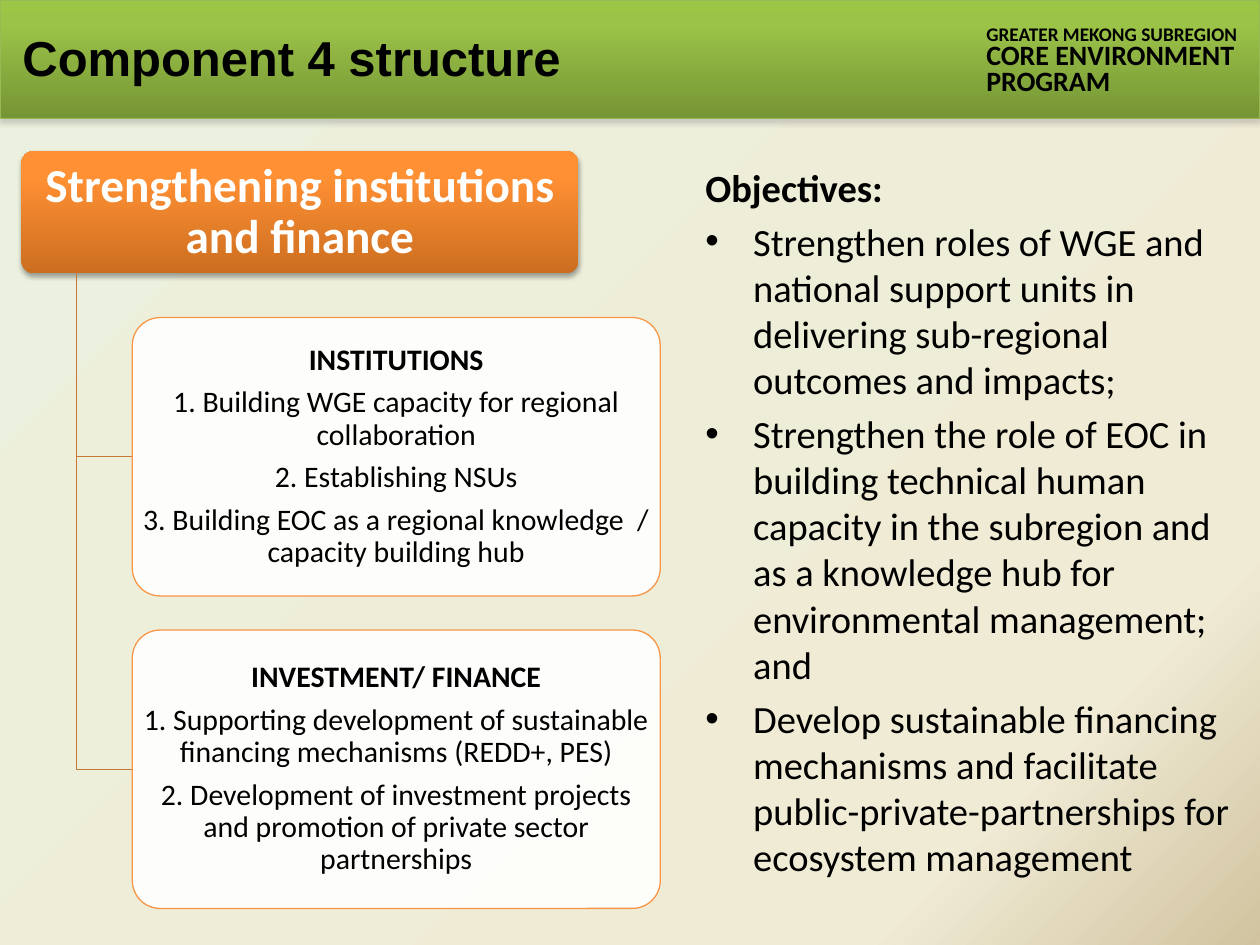
"""Build the Component 4 structure slide."""
from dataclasses import dataclass

import lxml.etree
import pptx
import pptx.dml.color
import pptx.enum.shapes
import pptx.enum.text
import pptx.oxml.ns
import pptx.util

Inches = pptx.util.Inches
Pt = pptx.util.Pt
qn = pptx.oxml.ns.qn
Align = pptx.enum.text.PP_ALIGN
Anchor = pptx.enum.text.MSO_ANCHOR
Preset = pptx.enum.shapes.MSO_SHAPE

COLORS = {
    "text": "000000",
    "white": "FFFFFF",
    "banner_edge": "98B954",
    "branch": "C67838",
    "card_edge": "F79646",
    "banner_shadow": "808080",
    "heading_shadow": "000000",
}
GRADIENTS = {
    "page": [(0, "EBF1DE"), (82, "F0EBD5"), (100, "D1C39F")],
    "banner": [(0, "9CC746"), (20, "9BC348"), (100, "769535")],
    "heading": [(0, "CC6E20"), (80, "FF9034"), (100, "FF9136")],
}


@dataclass
class Area:
    left: float
    top: float
    width: float
    height: float

    def lengths(self):
        return [Inches(side) for side in (self.left, self.top, self.width, self.height)]


@dataclass
class Card:
    title: str
    items: list[str]


HEADING = Area(0.17, 1.2, 4.42, 0.97)
CARD_LEFT, CARD_TOP, CARD_WIDTH, CARD_HEIGHT, CARD_STEP = 1.05, 2.52, 4.19, 2.21, 2.48
BRANCH_LEFT = 0.61
CARDS = [
    Card("INSTITUTIONS", [
        "1. Building WGE capacity for regional collaboration",
        "2. Establishing NSUs",
        "3. Building EOC as a regional knowledge  / capacity building hub",
    ]),
    Card("INVESTMENT/ FINANCE", [
        "1. Supporting development of sustainable financing mechanisms (REDD+, PES)",
        "2. Development of investment projects and promotion of private sector partnerships",
    ]),
]
OBJECTIVES = [
    "Strengthen roles of WGE and national support units in delivering sub-regional "
    "outcomes and impacts;",
    "Strengthen the role of EOC in building technical human capacity in the subregion "
    "and as a knowledge hub for environmental management; and",
    "Develop sustainable financing mechanisms and facilitate "
    "public-private-partnerships for ecosystem management",
]


def rgb(name: str):
    return pptx.dml.color.RGBColor.from_string(COLORS[name])


def add_node(parent, tag: str, **attributes):
    return lxml.etree.SubElement(
        parent, qn(tag), {key: str(value) for key, value in attributes.items()})


def paint_gradient(owner, fill, name: str, angle: int | None = None) -> None:
    fill.gradient()
    gradient = next(owner.element.iter(qn("a:gradFill")))
    for child in list(gradient):
        gradient.remove(child)
    stops = add_node(gradient, "a:gsLst")
    for position, color in GRADIENTS[name]:
        add_node(add_node(stops, "a:gs", pos=position * 1000), "a:srgbClr", val=color)
    if angle is None:
        circle = add_node(gradient, "a:path", path="circle")
        add_node(circle, "a:fillToRect", r=100000, b=100000)
    else:
        add_node(gradient, "a:lin", ang=angle * 60000, scaled=0)


def cast_shadow(shape, name: str) -> None:
    effects = shape.element.spPr.find(qn("a:effectLst"))
    shadow = add_node(effects, "a:outerShdw", blurRad=Pt(3.1), dist=Pt(1.8),
                      dir=5400000, rotWithShape=0)
    add_node(add_node(shadow, "a:srgbClr", val=COLORS[name]), "a:alpha", val=35000)


def add_panel(page, preset, area: Area, edge: str | None = None):
    panel = page.shapes.add_shape(preset, *area.lengths())
    panel.shadow.inherit = False
    if preset == Preset.ROUNDED_RECTANGLE:
        panel.adjustments[0] = 0.1
    if edge:
        panel.line.color.rgb = rgb(edge)
        panel.line.width = Pt(0.75)
    else:
        panel.line.fill.background()
    return panel


def set_frame(box, anchor=Anchor.TOP, inset_x: float = 0.1, inset_y: float = 0.05):
    frame = box.text_frame
    frame.word_wrap = True
    frame.vertical_anchor = anchor
    frame.margin_left = frame.margin_right = Inches(inset_x)
    frame.margin_top = frame.margin_bottom = Inches(inset_y)
    return frame


def add_text_box(page, area: Area):
    return set_frame(page.shapes.add_textbox(*area.lengths()))


def write(frame, text: str, *, size: float, bold: bool = False, font: str = "Calibri",
          color: str = "text", align=Align.LEFT, spacing=None, before: float = 0,
          after: float = 0, bullet: bool = False) -> None:
    para = frame.paragraphs[0]
    if para.runs:
        para = frame.add_paragraph()
    para.alignment = align
    para.space_before, para.space_after = Pt(before), Pt(after)
    if spacing:
        para.line_spacing = spacing
    if bullet:
        properties = para._p.get_or_add_pPr()
        properties.set("marL", str(Inches(0.38)))
        properties.set("indent", str(Inches(-0.38)))
        add_node(properties, "a:buFont", typeface="Arial")
        add_node(properties, "a:buChar", char="•")
    span = para.add_run()
    span.text = text
    span.font.name, span.font.size, span.font.bold = font, Pt(size), bold
    span.font.color.rgb = rgb(color)


def add_branch(page, end_y: float) -> None:
    start_y = HEADING.top + HEADING.height
    builder = page.shapes.build_freeform(Inches(BRANCH_LEFT), Inches(start_y))
    corners = [(BRANCH_LEFT, end_y), (CARD_LEFT, end_y)]
    builder.add_line_segments([(Inches(x), Inches(y)) for x, y in corners], close=False)
    branch = builder.convert_to_shape()
    branch.shadow.inherit = False
    branch.fill.background()
    branch.line.color.rgb = rgb("branch")
    branch.line.width = Pt(0.75)


def add_card(page, card: Card, top: float) -> None:
    add_branch(page, top + CARD_HEIGHT / 2)
    area = Area(CARD_LEFT, top, CARD_WIDTH, CARD_HEIGHT)
    panel = add_panel(page, Preset.ROUNDED_RECTANGLE, area, "card_edge")
    panel.fill.solid()
    panel.fill.fore_color.rgb = rgb("white")
    fill_color = panel.element.spPr.find(qn("a:solidFill")).find(qn("a:srgbClr"))
    add_node(fill_color, "a:alpha", val=90000)
    frame = set_frame(panel, Anchor.MIDDLE, 0, 0)
    for index, text in enumerate([card.title, *card.items]):
        write(frame, text, size=17, bold=index == 0, align=Align.CENTER,
              spacing=0.9, after=6)


def main() -> None:
    deck = pptx.Presentation()
    deck.slide_width, deck.slide_height = Inches(10), Inches(7.5)
    page = deck.slides.add_slide(deck.slide_layouts[6])
    paint_gradient(page, page.background.fill, "page")

    banner = add_panel(page, Preset.RECTANGLE, Area(0, 0, 10, 0.94), "banner_edge")
    paint_gradient(banner, banner.fill, "banner", 90)
    cast_shadow(banner, "banner_shadow")
    program = add_text_box(page, Area(7.73, 0.1, 2.46, 0.73))
    for text, size in [("GREATER MEKONG SUBREGION", 11), ("CORE ENVIRONMENT PROGRAM", 16)]:
        write(program, text, size=size, bold=True, spacing=Pt(15))
    title = add_text_box(page, Area(0.08, 0.17, 7.5, 0.7))
    write(title, "Component 4 structure", size=28, bold=True, font="Arial")

    objectives = add_text_box(page, Area(5.5, 1.25, 4.5, 6))
    write(objectives, "Objectives:", size=22, bold=True)
    for text in OBJECTIVES:
        write(objectives, text, size=22, before=4.4, bullet=True)

    heading = add_panel(page, Preset.ROUNDED_RECTANGLE, HEADING)
    paint_gradient(heading, heading.fill, "heading", 270)
    cast_shadow(heading, "heading_shadow")
    write(set_frame(heading, Anchor.MIDDLE, 0.03, 0.01),
          "Strengthening institutions and finance", size=27, bold=True, color="white",
          align=Align.CENTER, spacing=0.9)
    for index, card in enumerate(CARDS):
        add_card(page, card, CARD_TOP + index * CARD_STEP)
    deck.save("out.pptx")


if __name__ == "__main__":
    main()
